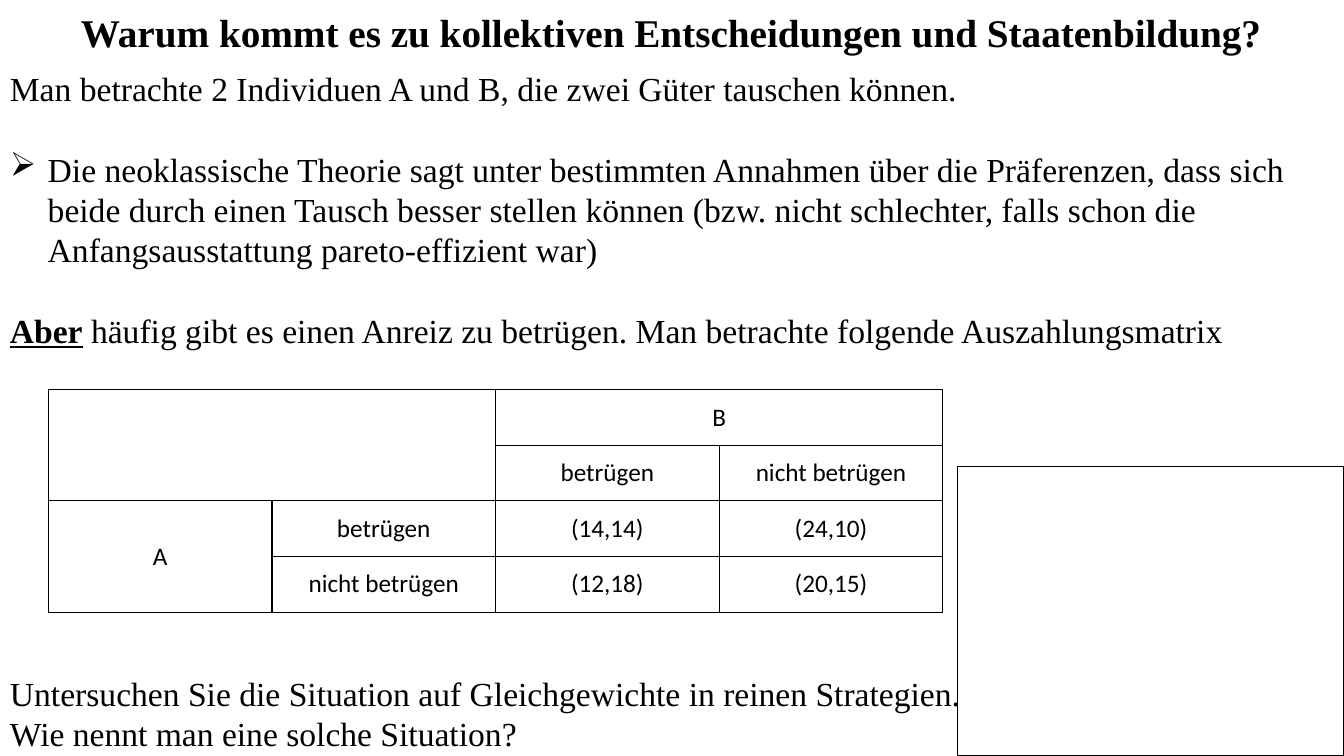
from dataclasses import dataclass

from lxml import etree
from pptx import Presentation
from pptx import util as u
from pptx.dml.color import RGBColor
from pptx.enum import shapes, text
from pptx.oxml import ns

PX = 9525  # EMU per px
BLACK = RGBColor(0, 0, 0)
SERIF, SANS = "Times New Roman", "Calibri"
LINE = 28.8  # body line height in points


@dataclass
class Box:
    x: int
    y: int
    w: int
    h: int

    def emu(self) -> list[int]:
        return [n * PX for n in (self.x, self.y, self.w, self.h)]


@dataclass
class Para:
    words: str
    gap: int = 0  # lines left free above
    lead: str = ""  # bold, underlined opening
    mark: str = ""  # bullet


@dataclass
class Cell:
    row: int
    col: int
    words: str
    rows: int = 1
    cols: int = 1


TITLE = "Warum kommt es zu kollektiven Entscheidungen und Staatenbildung?"
BODY = [
    Para("Man betrachte 2 Individuen A und B, die zwei Güter tauschen können."),
    Para("Die neoklassische Theorie sagt unter bestimmten Annahmen über die "
         "Präferenzen, dass sich beide durch einen Tausch besser stellen können "
         "(bzw. nicht schlechter, falls schon die Anfangsausstattung "
         "pareto-effizient war)", gap=1, mark="➢"),
    Para(" häufig gibt es einen Anreiz zu betrügen. Man betrachte folgende "
         "Auszahlungsmatrix", gap=1, lead="Aber"),
    Para("Untersuchen Sie die Situation auf Gleichgewichte in reinen Strategien.",
         gap=8),
    Para("Wie nennt man eine solche Situation?"),
]
CELLS = [
    Cell(0, 0, "", rows=2, cols=2),
    Cell(0, 2, "B", cols=2),
    Cell(1, 2, "betrügen"),
    Cell(1, 3, "nicht betrügen"),
    Cell(2, 0, "A", rows=2),
    Cell(2, 1, "betrügen"),
    Cell(2, 2, "(14,14)"),
    Cell(2, 3, "(24,10)"),
    Cell(3, 1, "nicht betrügen"),
    Cell(3, 2, "(12,18)"),
    Cell(3, 3, "(20,15)"),
]


def style(font, face: str, size: int, bold: bool = False) -> None:
    font.name, font.size, font.bold = face, u.Pt(size), bold
    font.color.rgb = BLACK


def add_box(slide, box: Box):
    frame = slide.shapes.add_textbox(*box.emu()).text_frame
    frame.word_wrap = True
    return frame


def add_mark(para, mark: str) -> None:
    """Give a paragraph a bullet with a hanging indent."""
    props = para._p.get_or_add_pPr()
    props.set("marL", str(36 * PX))
    props.set("indent", str(-36 * PX))
    etree.SubElement(props, ns.qn("a:buChar")).set("char", mark)


def add_body(slide, box: Box, paras: list[Para]) -> None:
    frame = add_box(slide, box)
    for i, item in enumerate(paras):
        para = frame.add_paragraph() if i else frame.paragraphs[0]
        para.line_spacing = u.Pt(LINE)
        para.space_before = u.Pt(LINE * item.gap)
        if item.lead:
            run = para.add_run()
            run.text = item.lead
            style(run.font, SERIF, 24, bold=True)
            run.font.underline = True
        run = para.add_run()
        run.text = item.words
        style(run.font, SERIF, 24)
        if item.mark:
            add_mark(para, item.mark)


def add_edges(cell) -> None:
    """Draw a thin black border on all four sides."""
    props = cell._tc.get_or_add_tcPr()
    for i, side in enumerate(("lnL", "lnR", "lnT", "lnB")):
        edge = etree.Element(ns.qn(f"a:{side}"), w=str(u.Pt(1)))
        fill = etree.SubElement(edge, ns.qn("a:solidFill"))
        etree.SubElement(fill, ns.qn("a:srgbClr"), val=str(BLACK))
        props.insert(i, edge)


def add_matrix(slide, box: Box, size: int, cells: list[Cell]) -> None:
    table = slide.shapes.add_table(size, size, *box.emu()).table
    table.first_row = table.horz_banding = False
    for col in table.columns:
        col.width = box.w // size * PX
    for row in table.rows:
        row.height = box.h // size * PX
    for cell in table.iter_cells():
        cell.fill.background()
        add_edges(cell)
    for item in cells:
        cell = table.cell(item.row, item.col)
        if item.rows > 1 or item.cols > 1:
            cell.merge(table.cell(item.row + item.rows - 1,
                                  item.col + item.cols - 1))
        cell.vertical_anchor = text.MSO_ANCHOR.MIDDLE
        para = cell.text_frame.paragraphs[0]
        para.text = item.words
        para.alignment = text.PP_ALIGN.CENTER
        for run in para.runs:
            style(run.font, SANS, 18)


def add_frame(slide, box: Box) -> None:
    rect = slide.shapes.add_shape(shapes.MSO_SHAPE.RECTANGLE, *box.emu())
    rect.shadow.inherit = False
    rect.fill.background()
    rect.line.color.rgb = BLACK
    rect.line.width = u.Pt(1)


def main() -> None:
    deck = Presentation()
    deck.slide_width, deck.slide_height = 1280 * PX, 720 * PX
    slide = deck.slides.add_slide(deck.slide_layouts[6])

    # Heading
    para = add_box(slide, Box(0, 3, 1278, 57)).paragraphs[0]
    para.text = TITLE
    para.alignment = text.PP_ALIGN.CENTER
    style(para.runs[0].font, SERIF, 28, bold=True)

    # Argument, payoff matrix and empty answer field
    add_body(slide, Box(0, 60, 1278, 660), BODY)
    add_matrix(slide, Box(46, 371, 852, 212), 4, CELLS)
    add_frame(slide, Box(912, 444, 368, 276))

    deck.save("out.pptx")


if __name__ == "__main__":
    main()
